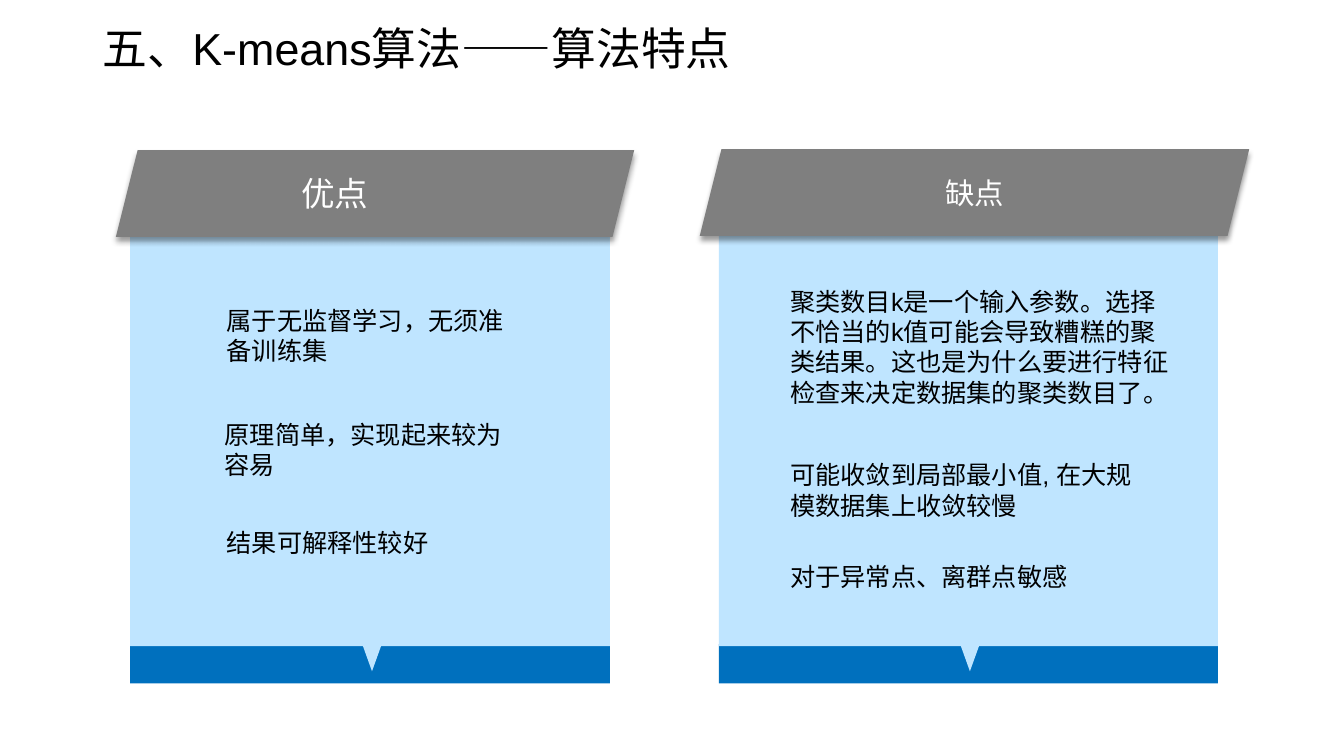
import pptx
import pptx.util
import pptx.oxml
import pptx.dml.color
import pptx.enum.shapes
import pptx.enum.text
from dataclasses import dataclass

Inches = pptx.util.Inches
RGB = pptx.dml.color.RGBColor.from_string
MSO = pptx.enum.shapes.MSO_SHAPE
ALIGN = pptx.enum.text.PP_ALIGN
A_NS = "http://schemas.openxmlformats.org/drawingml/2006/main"


@dataclass
class Theme:
    black: str = "000000"
    white: str = "FFFFFF"
    base: str = "0070BE"
    panel: str = "BFE5FF"
    fold: str = "595959"
    banner: str = "7F7F7F"
    latin: str = "Arial"
    cjk: str = "Noto Sans CJK SC"
    title: int = 32
    body: int = 18


theme = Theme()
SHADOW = (f'<a:effectLst xmlns:a="{A_NS}"><a:outerShdw blurRad="50800" dist="38100" '
          'dir="5400000" algn="t" rotWithShape="0"><a:srgbClr val="000000">'
          '<a:alpha val="40000"/></a:srgbClr></a:outerShdw></a:effectLst>')


def put_text(sp, runs, size=theme.body, color=theme.black, align=ALIGN.LEFT,
             indent=0, wrap=True, spacing=1.0, right=0.1):
    """Write (text, font) runs as the one paragraph of a shape."""
    tf = sp.text_frame
    tf.word_wrap = wrap
    tf.margin_right = Inches(right)
    tf.vertical_anchor = pptx.enum.text.MSO_ANCHOR.MIDDLE
    p = tf.paragraphs[0]
    p.alignment = align
    p.line_spacing = spacing
    pPr = p._p.get_or_add_pPr()
    pPr.set("marL", str(Inches(indent)))
    pPr.set("indent", "0")
    for text, font in runs:
        r = p.add_run()
        r.text = text
        r.font.name = font
        r.font.size = pptx.util.Pt(size)
        r.font.color.rgb = RGB(color)
        r.font._element.append(pptx.oxml.parse_xml(
            f'<a:ea xmlns:a="{A_NS}" typeface="{theme.cjk}"/>'))


def paint(sp, color):
    sp.shadow.inherit = False
    sp.fill.solid()
    sp.fill.fore_color.rgb = RGB(color)
    sp.line.fill.background()


prs = pptx.Presentation()
prs.slide_width, prs.slide_height = Inches(13.33), Inches(7.5)
slide = prs.slides.add_slide(prs.slide_layouts[6])

# Title
title = slide.shapes.add_textbox(Inches(0.92), 0, Inches(11.5), Inches(1.02))
put_text(title, [("五、", theme.cjk), ("K-means算法", theme.latin),
                 ("——算法特点", theme.cjk)], size=theme.title, spacing=0.9)

# Cards: panel left and width, notch centre, banner box, heading and its format
cards = [
    (1.29, 4.76, 3.69, (1.15, 1.49, 5.14, 0.86), "优点",
     dict(size=24, right=0.9)),
    (7.13, 4.95, 9.62, (6.94, 1.48, 5.45, 0.86), "缺点",
     dict(size=21)),
]
for left, width, notch, banner_box, heading, fmt in cards:
    card = slide.shapes.add_group_shape().shapes
    right = left + width
    bar = card.add_shape(MSO.RECTANGLE, Inches(left), Inches(6.39),
                         Inches(width), Inches(0.39))
    paint(bar, theme.base)

    # Panel with a notch, and the fold behind the banner
    panel = [(left, 1.9), (right, 1.9), (right, 6.41), (notch + 0.09, 6.41),
             (notch, 6.66), (notch - 0.09, 6.41), (left, 6.41)]
    fold = [(right - 0.36, 1.49), (right - 0.57, 1.93), (right - 0.38, 1.9)]
    for points, color in ((panel, theme.panel), (fold, theme.fold)):
        points = [(Inches(x), Inches(y)) for x, y in points]
        outline = card.build_freeform(*points[0])
        outline.add_line_segments(points[1:], close=True)
        paint(outline.convert_to_shape(), color)

    # Heading banner
    banner = card.add_shape(MSO.PARALLELOGRAM, *map(Inches, banner_box))
    paint(banner, theme.banner)
    spPr = banner._element.spPr
    spPr.replace(spPr.find(f"{{{A_NS}}}effectLst"), pptx.oxml.parse_xml(SHADOW))
    put_text(banner, [(heading, theme.cjk)], color=theme.white,
             align=ALIGN.CENTER, **fmt)

# Points on the cards
notes = [
    ((1.65, 2.66, 3.55, 1.34), "属于无监督学习，无须准备训练集", True),
    ((1.63, 3.79, 3.55, 1.34), "原理简单，实现起来较为容易", True),
    ((1.65, 4.71, 3.55, 1.34), "结果可解释性较好", True),
    ((7.24, 2.89, 4.47, 1.1),
     "聚类数目k是一个输入参数。选择不恰当的k值可能会导致糟糕的聚类结果。"
     "这也是为什么要进行特征检查来决定数据集的聚类数目了。", True),
    ((7.24, 4.19, 4.2, 1.34), "可能收敛到局部最小值, 在大规模数据集上收敛较慢", True),
    ((7.24, 5.52, 3.48, 0.4), "对于异常点、离群点敏感", False),
]
for box, text, wrap in notes:
    sp = slide.shapes.add_textbox(*map(Inches, box))
    put_text(sp, [(text, theme.latin)], indent=0.5, wrap=wrap)

prs.save("out.pptx")
